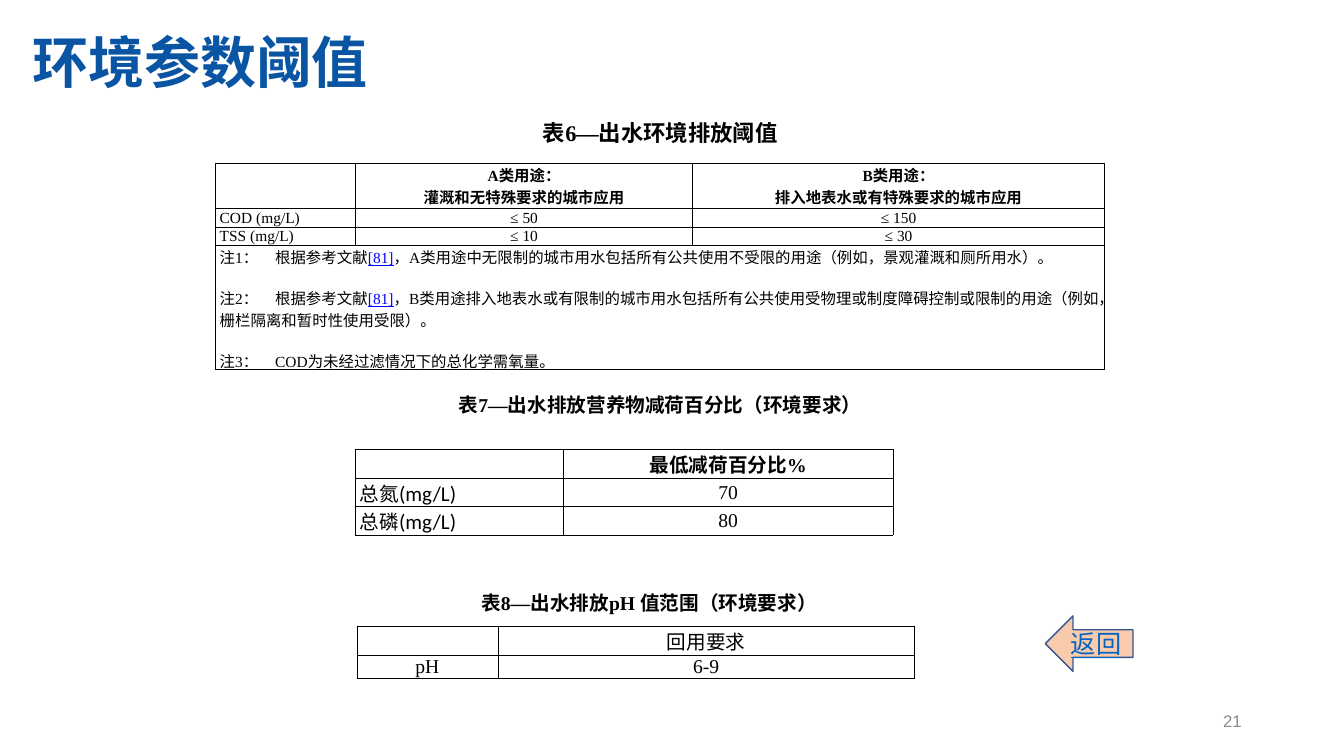
"""Build the slide of environmental parameter thresholds on a grid of 160 columns by 90 rows."""
from dataclasses import dataclass
from typing import NamedTuple

from lxml import etree
from pptx import Presentation
from pptx import util as u
from pptx.dml import color as dml
from pptx.enum import shapes, text
from pptx.oxml import ns

COLS, ROWS = 160, 90
UNIT = u.Inches(7.5) / ROWS
SERIF, SANS, BODY = "Times New Roman", "Arial", "Calibri"
BLACK, LINK = "000000", "0000FF"
LEFT, CENTER, RIGHT = text.PP_ALIGN.LEFT, text.PP_ALIGN.CENTER, text.PP_ALIGN.RIGHT
TOP, MIDDLE = text.MSO_ANCHOR.TOP, text.MSO_ANCHOR.MIDDLE
NO_STYLE = "{2D5ABB26-0587-4C30-8999-92F81FD0307C}"
SIDES = "LRTB"
NOTE_GAP, NOTE_TAB = 13, 6.6


class Box(NamedTuple):
    x: float
    y: float
    w: float
    h: float


class Run(NamedTuple):
    text: str
    size: float = 11
    font: str = SERIF
    color: str = BLACK
    bold: bool = False
    underline: bool = False


@dataclass
class Cell:
    row: int
    col: int
    paras: tuple = ()
    rows: int = 1
    cols: int = 1
    align: int = CENTER
    anchor: int = MIDDLE
    sides: str = SIDES
    below: float = 0
    gap: float = 0


def g(n: float) -> int:
    return u.Emu(round(n * UNIT))


def place(box: Box) -> tuple:
    return tuple(g(n) for n in box)


def rgb(value: str) -> dml.RGBColor:
    return dml.RGBColor.from_string(value)


def write(p, content: str, *, size: float, font: str, color: str,
          bold: bool = False, underline: bool = False) -> None:
    r = p.add_run()
    r.text = content
    f = r.font
    f.size, f.name, f.bold, f.underline = u.Pt(size), font, bold, underline
    f.color.rgb = rgb(color)


def single(tf, run: Run, align: int) -> None:
    tf.margin_left = tf.margin_right = tf.margin_top = tf.margin_bottom = 0
    tf.vertical_anchor = MIDDLE
    p = tf.paragraphs[0]
    p.alignment = align
    write(p, run.text, **{k: v for k, v in run._asdict().items() if k != "text"})


def add_text(s, box: Box, run: Run, align: int) -> None:
    tf = s.shapes.add_textbox(*place(box)).text_frame
    tf.word_wrap = True
    single(tf, run, align)


def add_border(tc_pr, index: int, side: str) -> None:
    ln = etree.Element(ns.qn(f"a:ln{side}"), w=str(u.Pt(0.5)))
    fill = etree.SubElement(ln, ns.qn("a:solidFill"))
    etree.SubElement(fill, ns.qn("a:srgbClr"), val=BLACK)
    tc_pr.insert(index, ln)


def add_tab(p) -> None:
    tabs = etree.SubElement(p._p.get_or_add_pPr(), ns.qn("a:tabLst"))
    etree.SubElement(tabs, ns.qn("a:tab"), pos=str(g(NOTE_TAB)), algn="l")


def fill_cell(table, item: Cell) -> None:
    cell = table.cell(item.row, item.col)
    if item.rows * item.cols > 1:
        cell.merge(table.cell(item.row + item.rows - 1, item.col + item.cols - 1))
    cell.vertical_anchor = item.anchor
    cell.margin_bottom = g(item.below)
    tf = cell.text_frame
    for i, runs in enumerate(item.paras):
        p = tf.add_paragraph() if i else tf.paragraphs[0]
        if any("\t" in run.text for run in runs):
            add_tab(p)
        p.alignment = item.align
        if i and item.gap:
            p.space_before = u.Pt(item.gap)
        for run in runs:
            write(p, run.text, **{k: v for k, v in run._asdict().items() if k != "text"})
    tc_pr = cell._tc.get_or_add_tcPr()
    for i, side in enumerate(item.sides):
        add_border(tc_pr, i, side)


def add_grid(s, x: float, y: float, widths: list, heights: list, cells: list) -> None:
    box = Box(x, y, sum(widths), sum(heights))
    table = s.shapes.add_table(len(heights), len(widths), *place(box)).table
    table.first_row = table.horz_banding = False
    table._tbl.tblPr.find(ns.qn("a:tableStyleId")).text = NO_STYLE
    for column, width in zip(table.columns, widths):
        column.width = g(width)
    for row, height in zip(table.rows, heights):
        row.height = g(height)
    for cell in table.iter_cells():
        cell.fill.background()
        cell.margin_left = cell.margin_right = g(0.48)
        cell.margin_top = cell.margin_bottom = 0
        cell.text_frame.paragraphs[0]._p.get_or_add_endParaRPr().set("sz", "800")
    for item in cells:
        fill_cell(table, item)


def add_back_arrow(s, box: Box, run: Run) -> None:
    sp = s.shapes.add_shape(shapes.MSO_SHAPE.LEFT_ARROW, *place(box))
    sp.shadow.inherit = False
    sp.fill.solid()
    sp.fill.fore_color.rgb = rgb("F8CBAD")
    sp.line.color.rgb = rgb("325491")
    sp.line.width = u.Pt(1)
    sp.text_frame.word_wrap = False
    single(sp.text_frame, run, CENTER)


def heading(content: str, size: float = 14) -> tuple:
    return (Run(content, size, bold=True),)


def cited(number: int, content: str) -> tuple:
    return (Run(f"注{number}：\t根据参考文献"), Run("[81]", color=LINK, underline=True), Run(content))


def threshold_cells() -> list:
    cells = [
        Cell(0, 0, (heading("表6—出水环境排放阈值", 16),), cols=5, sides="", below=1.68),
        Cell(1, 0),
        Cell(4, 0, (
            cited(1, "，A类用途中无限制的城市用水包括所有公共使用不受限的用途（例如，景观灌溉和厕所用水）。"),
            cited(2, "，B类用途排入地表水或有限制的城市用水包括所有公共使用受物理或制度障碍控制或限制的用途"
                     "（例如，栅栏隔离和暂时性使用受限）。"),
            (Run("注3：\tCOD为未经过滤情况下的总化学需氧量。"),),
        ), cols=5, align=LEFT, anchor=TOP, gap=NOTE_GAP),
        Cell(5, 0, (heading("表7—出水排放营养物减荷百分比（环境要求）"),), cols=5, sides="", below=1.44),
        Cell(6, 0, rows=3, sides=""),
        Cell(6, 1),
        Cell(6, 2, (heading("最低减荷百分比%"),), cols=2, anchor=TOP),
        Cell(6, 4, rows=3, sides=""),
    ]
    uses = (("A类用途：", "灌溉和无特殊要求的城市应用"), ("B类用途：", "排入地表水或有特殊要求的城市应用"))
    for col, lines in zip((1, 3), uses):
        cells.append(Cell(1, col, tuple(heading(line, 11) for line in lines), cols=2, anchor=TOP))
    for row, (name, *limits) in enumerate((("COD", 50, 150), ("TSS", 10, 30)), 2):
        cells.append(Cell(row, 0, ((Run(f"{name} (mg/L)"),),), align=LEFT))
        for col, limit in zip((1, 3), limits):
            cells.append(Cell(row, col, ((Run(f"≤ {limit}"),),), cols=2))
    for row, (name, share) in enumerate((("总氮", "70"), ("总磷", "80")), 7):
        cells.append(Cell(row, 1, ((Run(name, 14), Run("(mg/L)", 15, BODY)),), align=LEFT))
        cells.append(Cell(row, 2, ((Run(share, 14),),), cols=2))
    return cells


def main() -> None:
    prs = Presentation()
    prs.slide_width, prs.slide_height = g(COLS), g(ROWS)
    s = prs.slides.add_slide(prs.slide_layouts[5])
    title = s.shapes.title
    title.left, title.top, title.width, title.height = place(Box(3.84, 1.8, 146.88, 11.88))
    single(title.text_frame, Run("环境参数阈值", 40, SANS, "0A55A3", True), LEFT)
    title.text_frame.paragraphs[0].line_spacing = 0.9
    add_back_arrow(s, Box(124.44, 73.32, 10.44, 6.6), Run("返回", 18, BODY, "0563C1", underline=True))
    add_text(s, Box(113.04, 83.4, 34.8, 4.8), Run("21", 12, SANS, "8C8C8C"), RIGHT)
    add_grid(s, 25.68, 13.68, [16.68, 24.72, 15.36, 23.88, 25.2],
             [5.76, 5.4, 2.04, 2.04, 14.76, 9.48, 3.48, 3.36, 3.36], threshold_cells())
    ph_texts = (("", "回用要求"), ("pH", "6-9"))
    add_grid(s, 42.48, 74.52, [16.8, 49.56], [3.48, 2.52],
             [Cell(i, j, ((Run(value, 14),),) if value else ())
              for i, row in enumerate(ph_texts) for j, value in enumerate(row)])
    add_text(s, Box(37.8, 69.72, 78.96, 4.08), heading("表8—出水排放pH 值范围（环境要求）")[0], CENTER)
    prs.save("out.pptx")


if __name__ == "__main__":
    main()
